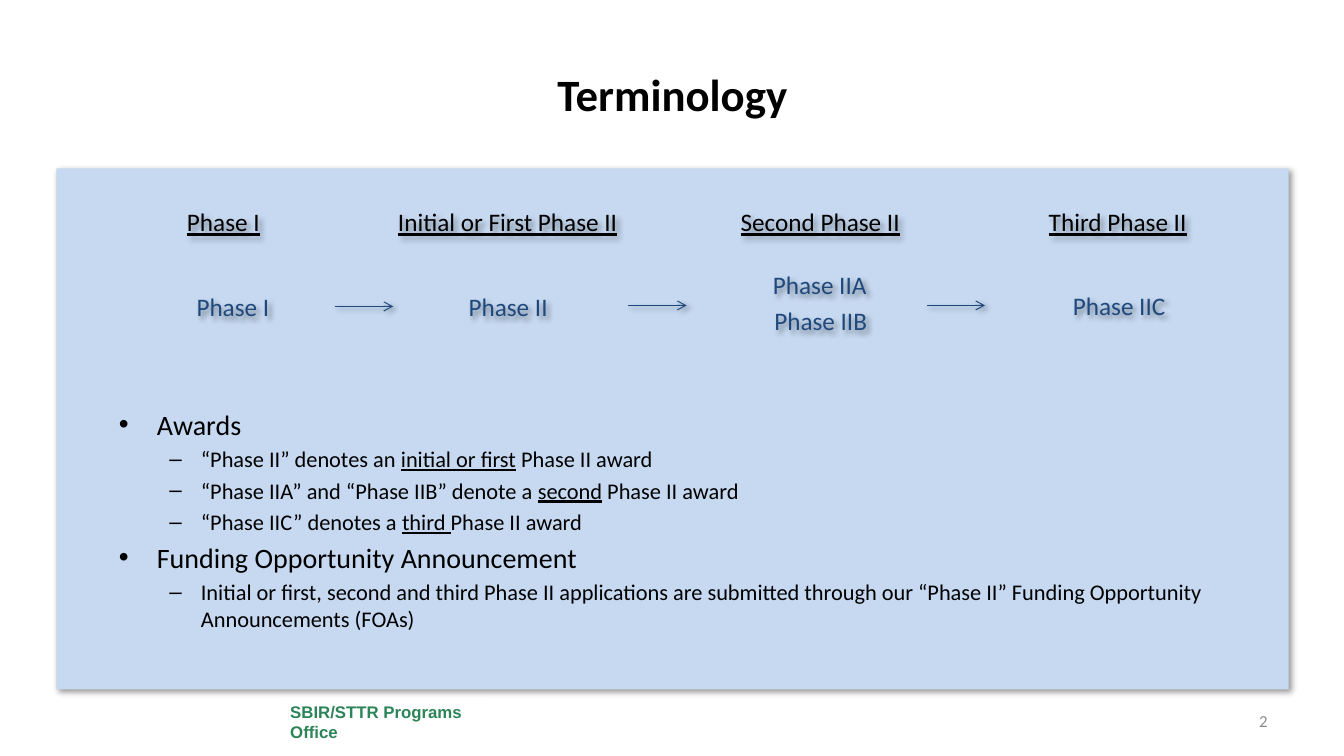
from dataclasses import dataclass

from lxml import etree
from pptx import Presentation
from pptx.dml.color import RGBColor
from pptx.enum import shapes, text
from pptx.oxml import parse_xml
from pptx.oxml.ns import nsdecls, qn
from pptx.util import Inches, Pt

BLACK = RGBColor(0x00, 0x00, 0x00)
WHITE = RGBColor(0xFF, 0xFF, 0xFF)
NAVY = RGBColor(0x1F, 0x49, 0x7D)
SKY = RGBColor(0xC6, 0xD9, 0xF1)
GREEN = RGBColor(0x2C, 0x84, 0x58)
GRAY = RGBColor(0x8C, 0x8C, 0x8C)
LEFT, MID, RIGHT = text.PP_ALIGN.LEFT, text.PP_ALIGN.CENTER, text.PP_ALIGN.RIGHT
TOP, CENTER = text.MSO_ANCHOR.TOP, text.MSO_ANCHOR.MIDDLE


@dataclass
class Label:
    words: str
    left: float
    top: float


@dataclass
class Arrow:
    left: float
    top: float


@dataclass
class Item:
    words: str  # underscores enclose underlined words
    level: int = 0


HEADS = [
    Label("Phase I", 0.89, 1.98),
    Label("Initial or First Phase II", 3.71, 1.98),
    Label("Second Phase II", 6.81, 1.98),
    Label("Third Phase II", 9.76, 1.98),
]
STEPS = [
    Label("Phase I", 1.17, 2.84),
    Label("Phase II", 3.9, 2.84),
    Label("Phase IIA", 6.99, 2.62),
    Label("Phase IIB", 7, 2.98),
    Label("Phase IIC", 9.96, 2.83),
]
ARROWS = [Arrow(3.32, 3.04), Arrow(6.23, 3.03), Arrow(9.19, 3.03)]
ITEMS = [
    Item("Awards"),
    Item("“Phase II” denotes an _initial or first_ Phase II award", 1),
    Item("“Phase IIA” and “Phase IIB” denote a _second_ Phase II award", 1),
    Item("“Phase IIC” denotes a _third _Phase II award", 1),
    Item("Funding Opportunity Announcement"),
    Item("Initial or first, second and third Phase II applications are submitted "
         "through our “Phase II” Funding Opportunity Announcements (FOAs)", 1),
]


def write(para, words: str, size: float = 18, color: RGBColor = BLACK,
          font: str = "Calibri", bold: bool = False, align=None) -> None:
    """Fill a paragraph, underlining the parts between underscores."""
    para.alignment = align
    for i, part in enumerate(words.split("_")):
        if part:
            run = para.add_run()
            run.text = part
            run.font.name, run.font.size, run.font.bold = font, Pt(size), bold
            run.font.color.rgb = color
            if i % 2:
                run.font.underline = True


def place(shape, left: float, top: float, width: float, height: float) -> None:
    shape.left, shape.top = Inches(left), Inches(top)
    shape.width, shape.height = Inches(width), Inches(height)


def shade(shape) -> None:
    """Cast a soft shadow to the lower right."""
    shape.element.spPr.append(parse_xml(
        f'<a:effectLst {nsdecls("a")}><a:outerShdw blurRad="50800" dist="38100" '
        'dir="2700000" algn="tl" rotWithShape="0"><a:srgbClr val="000000">'
        '<a:alpha val="40000"/></a:srgbClr></a:outerShdw></a:effectLst>'))


def add_text(slide, words: str, left: float, top: float, width: float,
             height: float, anchor=CENTER, **style):
    box = slide.shapes.add_textbox(
        Inches(left), Inches(top), Inches(width), Inches(height))
    box.text_frame.word_wrap = True
    box.text_frame.vertical_anchor = anchor
    write(box.text_frame.paragraphs[0], words, **style)
    return box


def add_arrow(slide, arrow: Arrow) -> None:
    line = slide.shapes.add_connector(
        shapes.MSO_CONNECTOR.STRAIGHT, Inches(arrow.left), Inches(arrow.top),
        Inches(arrow.left + 0.58), Inches(arrow.top))
    line.line.color.rgb = NAVY
    line.line.width = Pt(0.75)
    etree.SubElement(line.line._get_or_add_ln(), qn("a:tailEnd"), type="arrow")
    shade(line)


def main() -> None:
    deck = Presentation()
    deck.slide_width, deck.slide_height = Inches(13.33), Inches(7.5)
    slide = deck.slides.add_slide(deck.slide_layouts[1])
    title, body = slide.placeholders

    # Panel behind everything else
    panel = slide.shapes.add_shape(
        shapes.MSO_SHAPE.RECTANGLE, Inches(0.56), Inches(1.67),
        Inches(12.22), Inches(5.17))
    panel.fill.solid()
    panel.fill.fore_color.rgb = SKY
    panel.line.fill.background()
    shade(panel)
    title.element.addprevious(panel.element)

    # Title
    place(title, 0.67, 0.3, 12, 1.25)
    title.text_frame.vertical_anchor = CENTER
    write(title.text_frame.paragraphs[0], "Terminology", size=32, bold=True, align=MID)

    # Phase row
    for head in HEADS:
        shade(add_text(slide, f"_{head.words}_", head.left, head.top, 2.65, 0.44,
                       align=MID))
    for step in STEPS:
        shade(add_text(slide, step.words, step.left, step.top, 2.28, 0.4,
                       anchor=TOP, color=NAVY, align=MID))
    for arrow in ARROWS:
        add_arrow(slide, arrow)

    # Bulleted list
    place(body, 1.08, 3.99, 11.25, 2.88)
    frame = body.text_frame
    frame.auto_size = text.MSO_AUTO_SIZE.NONE
    for i, item in enumerate(ITEMS):
        para = frame.add_paragraph() if i else frame.paragraphs[0]
        para.level = item.level
        write(para, item.words, size=16 if item.level else 20)

    # Footer
    office = add_text(slide, "SBIR/STTR Programs Office", 2.78, 6.92, 2.11, 0.48,
                      size=12, color=GREEN, font="Arial", bold=True, align=LEFT)
    office.fill.solid()
    office.fill.fore_color.rgb = WHITE
    add_text(slide, "2", 10.56, 6.95, 2.11, 0.4, size=12, color=GRAY, align=RIGHT)

    deck.save("out.pptx")


if __name__ == "__main__":
    main()
